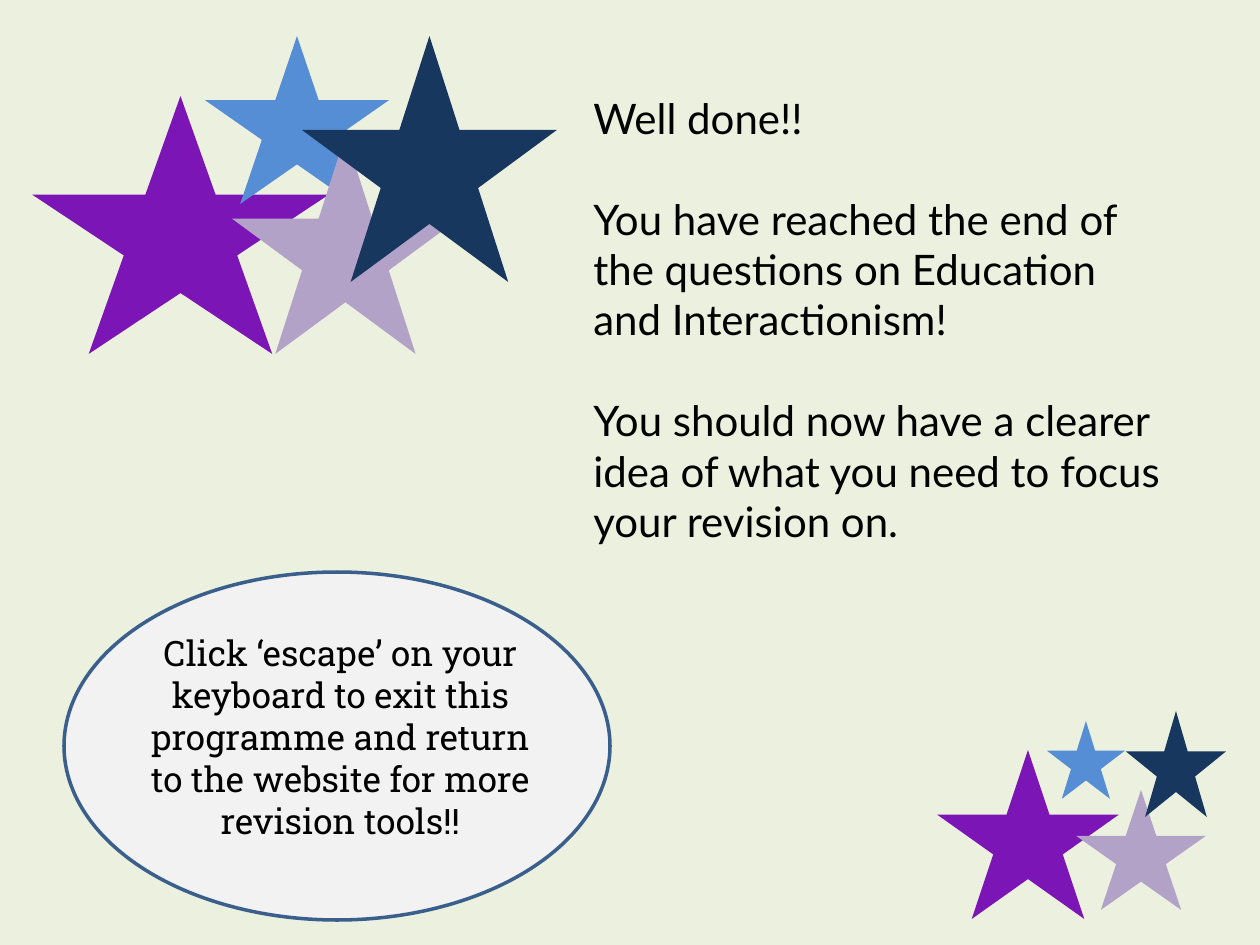
from pptx import Presentation
from pptx.dml.color import RGBColor
from pptx.enum.shapes import MSO_SHAPE
from pptx.enum.text import PP_ALIGN
from pptx.util import Pt

PX = 914400 / 126

PURPLE, BLUE, LILAC, NAVY = "7C15B5", "558ED5", "B3A2C7", "17375E"

# Each star: colour, left, top, width, height in px, from back to front
LARGE_STARS = [
    (PURPLE, 32, 96, 297, 258),
    (BLUE, 205, 36, 184, 168),
    (LILAC, 232, 135, 227, 219),
    (NAVY, 302, 36, 255, 246),
]
SMALL_STARS = [
    (PURPLE, 937, 750, 182, 169),
    (BLUE, 1047, 721, 78, 78),
    (LILAC, 1076, 790, 130, 120),
    (NAVY, 1126, 711, 100, 106),
]
CLOSING_WORDS = [
    "Well done!!",
    "You have reached the end of the questions on Education and Interactionism!",
    "You should now have a clearer idea of what you need to focus your revision on.",
]
EXIT_WORDS = [
    "Click ‘escape’ on your keyboard to exit this programme and return "
    "to the website for more revision tools!!"
]


def px(*lengths):
    """Turn px lengths into EMU."""
    return [round(length * PX) for length in lengths]


def colour(value):
    return RGBColor.from_string(value)


def add_filled_shape(page, kind, bounds, fill, line=None):
    shape = page.shapes.add_shape(kind, *px(*bounds))
    shape.shadow.inherit = False
    shape.fill.solid()
    shape.fill.fore_color.rgb = colour(fill)
    if line:
        shape.line.color.rgb = colour(line)
        shape.line.width = Pt(2)
    else:
        shape.line.fill.background()


def add_text(page, bounds, paragraphs, font, size, align=PP_ALIGN.LEFT, gap=0):
    """Add a wrapped text box, with gap points between its paragraphs."""
    frame = page.shapes.add_textbox(*px(*bounds)).text_frame
    frame.word_wrap = True
    frame.text = "\n".join(paragraphs)
    for index, para in enumerate(frame.paragraphs):
        para.alignment = align
        if index and gap:
            para.space_before = Pt(gap)
        for span in para.runs:
            span.font.name = font
            span.font.size = Pt(size)
            span.font.color.rgb = colour("000000")


def add_stars(page, stars):
    for fill, *bounds in stars:
        add_filled_shape(page, MSO_SHAPE.STAR_5_POINT, bounds, fill)


def main():
    deck = Presentation()
    deck.slide_width, deck.slide_height = px(1260, 945)
    page = deck.slides.add_slide(deck.slide_layouts[6])
    page.background.fill.solid()
    page.background.fill.fore_color.rgb = colour("EBF1DE")

    add_stars(page, LARGE_STARS)
    add_text(page, (581, 86, 595, 572), CLOSING_WORDS, "Lato", 24, gap=28.8)
    add_filled_shape(page, MSO_SHAPE.OVAL, (64, 572, 546, 348), "F2F2F2", "3A5F8C")
    add_text(page, (132, 625, 417, 267), EXIT_WORDS, "Roboto Slab", 20, PP_ALIGN.CENTER)
    add_stars(page, SMALL_STARS)
    deck.save("out.pptx")


if __name__ == "__main__":
    main()
